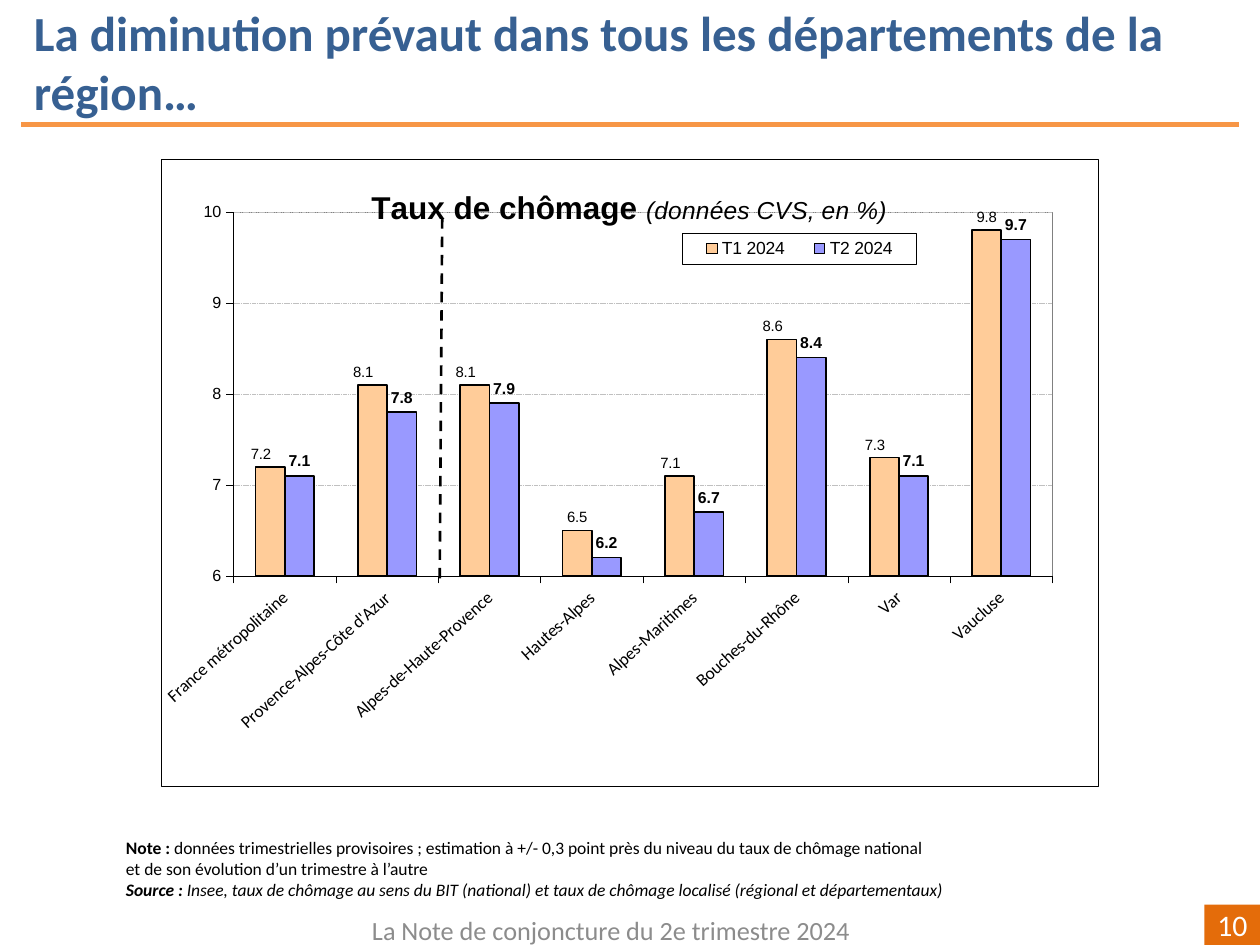
"""Build the slide on quarterly unemployment rates by department."""
from dataclasses import dataclass
from typing import NamedTuple

from lxml.etree import SubElement
from pptx import Presentation
from pptx.chart.data import CategoryChartData
from pptx.dml.color import RGBColor
from pptx.enum.chart import XL_CHART_TYPE as ChartType
from pptx.enum.chart import XL_LABEL_POSITION as LabelPosition
from pptx.enum.chart import XL_LEGEND_POSITION as LegendPosition
from pptx.enum.chart import XL_TICK_MARK as TickMark
from pptx.enum.dml import MSO_LINE as Dash
from pptx.enum.shapes import MSO_CONNECTOR as Connector
from pptx.enum.shapes import MSO_SHAPE as Shape
from pptx.enum.text import MSO_ANCHOR as Anchor
from pptx.enum.text import PP_ALIGN as Align
from pptx.oxml import parse_xml
from pptx.oxml.ns import nsdecls, qn
from pptx.util import Inches, Pt


@dataclass(frozen=True)
class Theme:
    body: str = "Calibri"
    chart: str = "Arial"
    heading: str = "376092"
    rule: str = "F79646"
    badge: str = "E46C0A"
    footer: str = "8C8C8C"
    grid: str = "C0C0C0"
    frame: str = "808080"
    highlight: str = "FFFF00"
    black: str = "000000"
    white: str = "FFFFFF"
    heading_size: float = 28
    chart_title_size: float = 18
    number_size: float = 17
    footer_size: float = 15
    subtitle_size: float = 14
    note_size: float = 10
    axis_size: float = 9.2
    bold_label_size: float = 9
    label_size: float = 8.5


class Box(NamedTuple):
    left: float
    top: float
    width: float
    height: float


class Quarter(NamedTuple):
    name: str
    rates: tuple
    color: str
    label_size: float
    bold: bool
    shifted: tuple = ()
    highlighted: tuple = ()


THEME = Theme()
DEPARTMENTS = (
    "France métropolitaine", "Provence-Alpes-Côte d'Azur", "Alpes-de-Haute-Provence",
    "Hautes-Alpes", "Alpes-Maritimes", "Bouches-du-Rhône", "Var", "Vaucluse",
)
QUARTERS = (
    Quarter("T1 2024", (7.2, 8.1, 8.1, 6.5, 7.1, 8.6, 7.3, 9.8), "FFCC99",
            THEME.label_size, False, shifted=(0, 1, 2, 4, 5, 6)),
    Quarter("T2 2024", (7.1, 7.8, 7.9, 6.2, 6.7, 8.4, 7.1, 9.7), "9999FF",
            THEME.bold_label_size, True, highlighted=(0, 1)),
)
NOTES = (
    (("Note : ", True, False),
     ("données trimestrielles provisoires ; estimation à +/- 0,3 point près du niveau "
      "du taux de chômage national", False, False)),
    (("et de son évolution d’un trimestre à l’autre", False, False),),
    (("Source : ", True, True),
     ("Insee, taux de chômage au sens du BIT (national) et taux de chômage localisé "
      "(régional et départementaux)", False, True)),
)


def inches(box: Box) -> tuple:
    return tuple(Inches(length) for length in box)


def style_font(font, size: float, color: str = THEME.black, name: str = THEME.body,
               bold: bool = False, italic: bool = False) -> None:
    font.size, font.name, font.bold, font.italic = Pt(size), name, bold, italic
    font.color.rgb = RGBColor.from_string(color)


def write(paragraph, text: str, align=None, **style) -> None:
    run = paragraph.add_run()
    run.text = text
    style_font(run.font, **style)
    if align is not None:
        paragraph.alignment = align


def style_line(line, color: str, width: float, dash=None) -> None:
    line.color.rgb = RGBColor.from_string(color)
    line.width = Pt(width)
    if dash is not None:
        line.dash_style = dash


def add_frame(slide, box: Box, anchor=Anchor.TOP):
    frame = slide.shapes.add_textbox(*inches(box)).text_frame
    frame.word_wrap, frame.vertical_anchor = True, anchor
    return frame


def add_line(slide, start: tuple, end: tuple, color: str, width: float, dash=None) -> None:
    ends = (Inches(length) for length in (*start, *end))
    connector = slide.shapes.add_connector(Connector.STRAIGHT, *ends)
    style_line(connector.line, color, width, dash)
    SubElement(connector._element.spPr, qn("a:effectLst"))


def insert_after(parent, tag: str, element) -> None:
    parent.find(qn(tag)).addnext(element)


def area_format(fill: str, border: str = ""):
    outline = (f'<a:ln w="3175"><a:solidFill><a:srgbClr val="{border}"/></a:solidFill></a:ln>'
               if border else "")
    return parse_xml(f'<c:spPr {nsdecls("c", "a")}><a:solidFill><a:srgbClr val="{fill}"/>'
                     f'</a:solidFill>{outline}</c:spPr>')


def manual_layout(modes: str = "", **fractions: float):
    values = "".join(f'<c:{key} val="{value}"/>' for key, value in fractions.items())
    return parse_xml(f'<c:layout {nsdecls("c")}><c:manualLayout>{modes}{values}'
                     '</c:manualLayout></c:layout>')


def format_series(series, quarter: Quarter) -> None:
    series.format.fill.solid()
    series.format.fill.fore_color.rgb = RGBColor.from_string(quarter.color)
    style_line(series.format.line, THEME.black, 1)
    style = dict(size=quarter.label_size, name=THEME.chart, bold=quarter.bold)
    labels = series.data_labels
    labels.show_value, labels.position = True, LabelPosition.OUTSIDE_END
    labels.number_format, labels.number_format_is_linked = "0.0", False
    style_font(labels.font, **style)
    for index in quarter.shifted + quarter.highlighted:
        label = series.points[index].data_label
        style_font(label.font, **style)
        label.position = LabelPosition.OUTSIDE_END
        extra = (manual_layout(x=-0.01, y=0) if index in quarter.shifted
                 else area_format(THEME.highlight))
        insert_after(labels._element.findall(qn("c:dLbl"))[-1], "c:idx", extra)


def format_axes(chart) -> None:
    departments, rates = chart.category_axis, chart.value_axis
    for axis in (departments, rates):
        axis.major_tick_mark, axis.minor_tick_mark = TickMark.OUTSIDE, TickMark.NONE
        style_line(axis.format.line, THEME.black, 0.25)
    style_font(departments.tick_labels.font, THEME.note_size)
    departments._element.txPr.find(qn("a:bodyPr")).set("rot", "-2520000")
    style_font(rates.tick_labels.font, THEME.axis_size, name=THEME.chart)
    rates.tick_labels.number_format = "0"
    rates.tick_labels.number_format_is_linked = False
    rates.minimum_scale, rates.maximum_scale, rates.major_unit = 6, 10, 1
    style_line(rates.major_gridlines.format.line, THEME.grid, 0.25, Dash.SQUARE_DOT)


def add_rate_chart(slide, box: Box) -> None:
    rates = CategoryChartData(number_format="0.0")
    rates.categories = DEPARTMENTS
    for quarter in QUARTERS:
        rates.add_series(quarter.name, quarter.rates)
    chart = slide.shapes.add_chart(ChartType.COLUMN_CLUSTERED, *inches(box), rates).chart
    style_font(chart.font, THEME.label_size, name=THEME.chart)
    plot = chart.plots[0]
    plot.gap_width, plot.overlap, plot.vary_by_categories = 150, 0, False
    for series, quarter in zip(plot.series, QUARTERS):
        format_series(series, quarter)
    format_axes(chart)

    title = chart.chart_title
    heading = title.text_frame.paragraphs[0]
    write(heading, "Taux de chômage ", size=THEME.chart_title_size, name=THEME.chart, bold=True)
    write(heading, "(données CVS, en %)", size=THEME.subtitle_size, name=THEME.chart, italic=True)
    title._element.find(qn("c:overlay")).set("val", "1")
    chart.has_legend = True
    legend = chart.legend
    legend.position, legend.include_in_layout = LegendPosition.RIGHT, False
    style_font(legend.font, THEME.note_size, name=THEME.chart)
    insert_after(legend._element, "c:overlay", area_format(THEME.white, THEME.black))

    edges = '<c:xMode val="edge"/><c:yMode val="edge"/>'
    area = chart._chartSpace.chart.plotArea
    for part in (title._element, legend._element, area):
        for layout in part.findall(qn("c:layout")):
            part.remove(layout)
    insert_after(title._element, "c:tx", manual_layout(edges, x=0.22, y=0.04))
    insert_after(legend._element, "c:legendPos",
                 manual_layout(edges, x=0.556, y=0.118, w=0.25, h=0.05))
    area.insert(0, manual_layout('<c:layoutTarget val="inner"/>' + edges,
                                 x=0.077, y=0.085, w=0.874, h=0.58))
    area.append(area_format(THEME.white, THEME.frame))
    insert_after(chart._chartSpace, "c:chart", area_format(THEME.white, THEME.black))


def add_notes(slide, box: Box) -> None:
    frame = add_frame(slide, box)
    frame.margin_left, frame.margin_top = Inches(0.02), Inches(0.03)
    frame.margin_right = frame.margin_bottom = 0
    for index, runs in enumerate(NOTES):
        paragraph = frame.add_paragraph() if index else frame.paragraphs[0]
        for text, bold, italic in runs:
            write(paragraph, text, size=THEME.note_size, bold=bold, italic=italic)


def add_page_number(slide, box: Box) -> None:
    badge = slide.shapes.add_shape(Shape.RECTANGLE, *inches(box))
    badge.shadow.inherit = False
    badge.fill.solid()
    badge.fill.fore_color.rgb = RGBColor.from_string(THEME.badge)
    badge.line.fill.background()
    badge.text_frame.vertical_anchor, badge.text_frame.word_wrap = Anchor.MIDDLE, False
    write(badge.text_frame.paragraphs[0], "10", Align.RIGHT,
          size=THEME.number_size, color=THEME.white)


def main() -> None:
    deck = Presentation()
    deck.slide_width, deck.slide_height = Inches(10), Inches(7.5)
    slide = deck.slides.add_slide(deck.slide_layouts[6])
    heading = add_frame(slide, Box(0.17, -0.03, 9.72, 1.04))
    write(heading.paragraphs[0], "La diminution prévaut dans tous les départements de la région…",
          size=THEME.heading_size, color=THEME.heading, bold=True)
    add_line(slide, (0.17, 0.99), (9.83, 0.99), THEME.rule, 3)
    add_page_number(slide, Box(9.56, 7.18, 0.44, 0.32))
    footer = add_frame(slide, Box(2.41, 7.18, 4.88, 0.4), Anchor.MIDDLE)
    write(footer.paragraphs[0], "La Note de conjoncture du 2e trimestre 2024", Align.CENTER,
          size=THEME.footer_size, color=THEME.footer)
    add_notes(slide, Box(0.98, 6.61, 6.83, 0.53))
    add_rate_chart(slide, Box(1.28, 1.26, 7.44, 4.98))
    add_line(slide, (3.49, 4.59), (3.51, 1.7), THEME.black, 1.5, Dash.DASH)
    deck.save("out.pptx")


if __name__ == "__main__":
    main()
